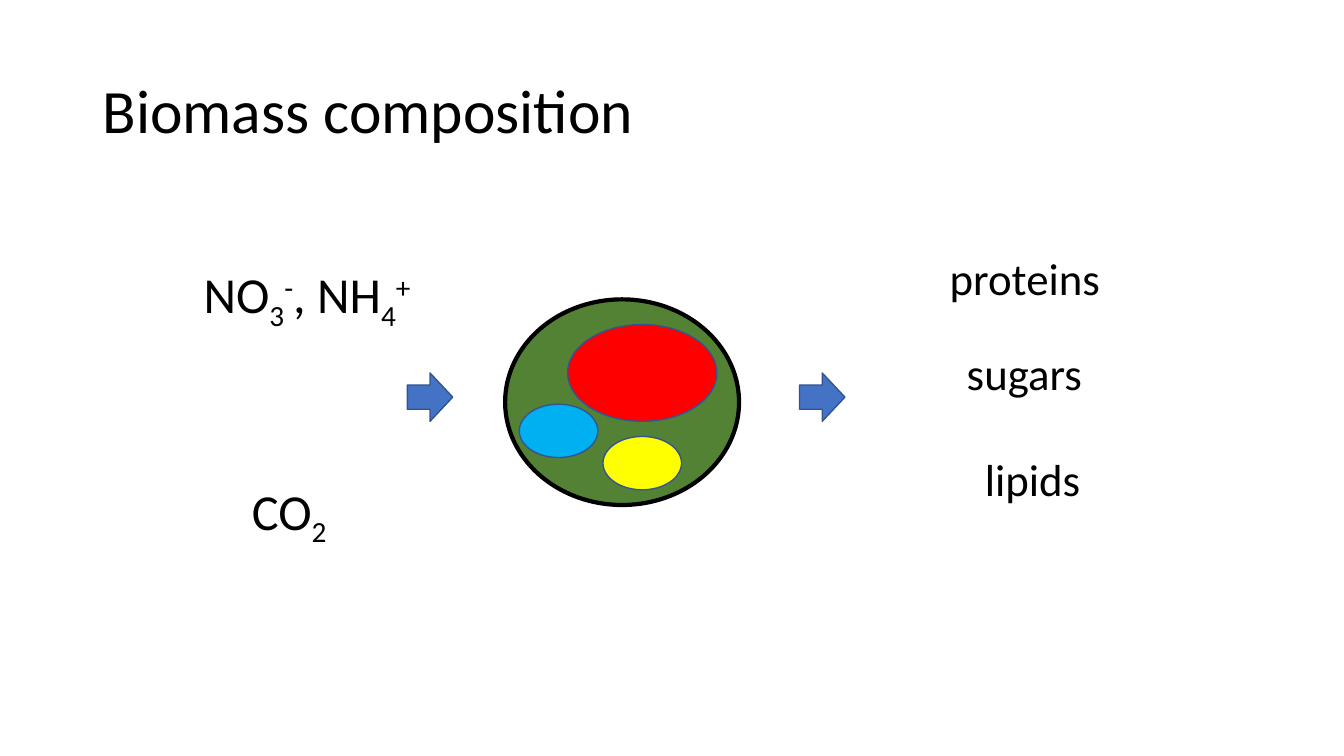
from dataclasses import dataclass

from pptx import Presentation
from pptx.dml.color import RGBColor
from pptx.enum import shapes, text
from pptx.shapes.autoshape import Shape
from pptx.slide import Slide
from pptx.util import Inches, Pt


@dataclass(frozen=True)
class Theme:
    font: str = "Calibri"
    ink: str = "000000"
    outline: str = "325491"
    arrow: str = "4472C4"
    cell: str = "548235"
    protein: str = "FF0000"
    lipid: str = "FFFF00"
    sugar: str = "00B0F0"
    title_size: int = 44
    input_size: int = 36
    output_size: int = 32
    thin: int = 1
    thick: int = 3


@dataclass(frozen=True)
class Box:
    left: float
    top: float
    width: float
    height: float

    def lengths(self) -> tuple[int, int, int, int]:
        return (Inches(self.left), Inches(self.top),
                Inches(self.width), Inches(self.height))


@dataclass(frozen=True)
class Figure:
    kind: shapes.MSO_SHAPE
    box: Box
    fill: str
    line: str
    weight: int


@dataclass(frozen=True)
class Piece:
    wording: str
    baseline: int = 0


@dataclass(frozen=True)
class Label:
    box: Box
    size: int
    pieces: tuple[Piece, ...]


THEME = Theme()
OVAL = shapes.MSO_SHAPE.OVAL
ARROW = shapes.MSO_SHAPE.RIGHT_ARROW
SUBSCRIPT, SUPERSCRIPT = -25, 30

TITLE = Label(Box(0.92, 0.4, 11.5, 1.45), THEME.title_size,
              (Piece("Biomass composition"),))

CELL = (
    Figure(OVAL, Box(5.01, 2.97, 2.32, 2.04), THEME.cell, THEME.ink, THEME.thick),
    Figure(OVAL, Box(5.63, 3.22, 1.48, 0.96), THEME.protein, THEME.outline, THEME.thin),
    Figure(OVAL, Box(5.98, 4.33, 0.78, 0.53), THEME.lipid, THEME.outline, THEME.thin),
    Figure(OVAL, Box(5.15, 4.01, 0.78, 0.53), THEME.sugar, THEME.outline, THEME.thin),
)

ARROWS = tuple(
    Figure(ARROW, Box(left, 3.7, 0.45, 0.48), THEME.arrow, THEME.outline, THEME.thin)
    for left in (4.04, 7.93)
)

INPUTS = (
    Label(Box(1.92, 2.56, 2.35, 0.71), THEME.input_size,
          (Piece("NO"), Piece("3", SUBSCRIPT), Piece("-", SUPERSCRIPT),
           Piece(", NH"), Piece("4", SUBSCRIPT), Piece("+", SUPERSCRIPT))),
    Label(Box(2.4, 4.71, 0.97, 0.71), THEME.input_size,
          (Piece("CO"), Piece("2", SUBSCRIPT))),
)

OUTPUTS = tuple(
    Label(Box(left, top, width, 0.64), THEME.output_size, (Piece(wording),))
    for wording, left, top, width in (
        ("proteins", 9.32, 2.44, 1.71),
        ("sugars", 9.49, 3.38, 1.36),
        ("lipids", 9.67, 4.43, 1.16),
    )
)


def draw_figure(slide: Slide, figure: Figure) -> None:
    shape = slide.shapes.add_shape(figure.kind, *figure.box.lengths())
    shape.shadow.inherit = False
    shape.fill.solid()
    shape.fill.fore_color.rgb = RGBColor.from_string(figure.fill)
    shape.line.color.rgb = RGBColor.from_string(figure.line)
    shape.line.width = Pt(figure.weight)


def draw_label(slide: Slide, label: Label) -> Shape:
    shape = slide.shapes.add_textbox(*label.box.lengths())
    shape.text_frame.word_wrap = False
    shape.text_frame.auto_size = text.MSO_AUTO_SIZE.SHAPE_TO_FIT_TEXT
    paragraph = shape.text_frame.paragraphs[0]
    for piece in label.pieces:
        run = paragraph.add_run()
        run.text = piece.wording
        run.font.name = THEME.font
        run.font.size = Pt(label.size)
        run.font.color.rgb = RGBColor.from_string(THEME.ink)
        if piece.baseline:
            run._r.get_or_add_rPr().set("baseline", str(piece.baseline * 1000))
    return shape


def draw_title(slide: Slide, label: Label) -> None:
    frame = draw_label(slide, label).text_frame
    frame.word_wrap = True
    frame.auto_size = text.MSO_AUTO_SIZE.NONE
    frame.vertical_anchor = text.MSO_ANCHOR.MIDDLE
    frame.paragraphs[0].line_spacing = 0.9


def main() -> None:
    presentation = Presentation()
    presentation.slide_width = Inches(13.33)
    presentation.slide_height = Inches(7.5)
    slide = presentation.slides.add_slide(presentation.slide_layouts[6])
    draw_title(slide, TITLE)
    for figure in CELL + ARROWS:
        draw_figure(slide, figure)
    for label in INPUTS + OUTPUTS:
        draw_label(slide, label)
    presentation.save("out.pptx")


if __name__ == "__main__":
    main()
